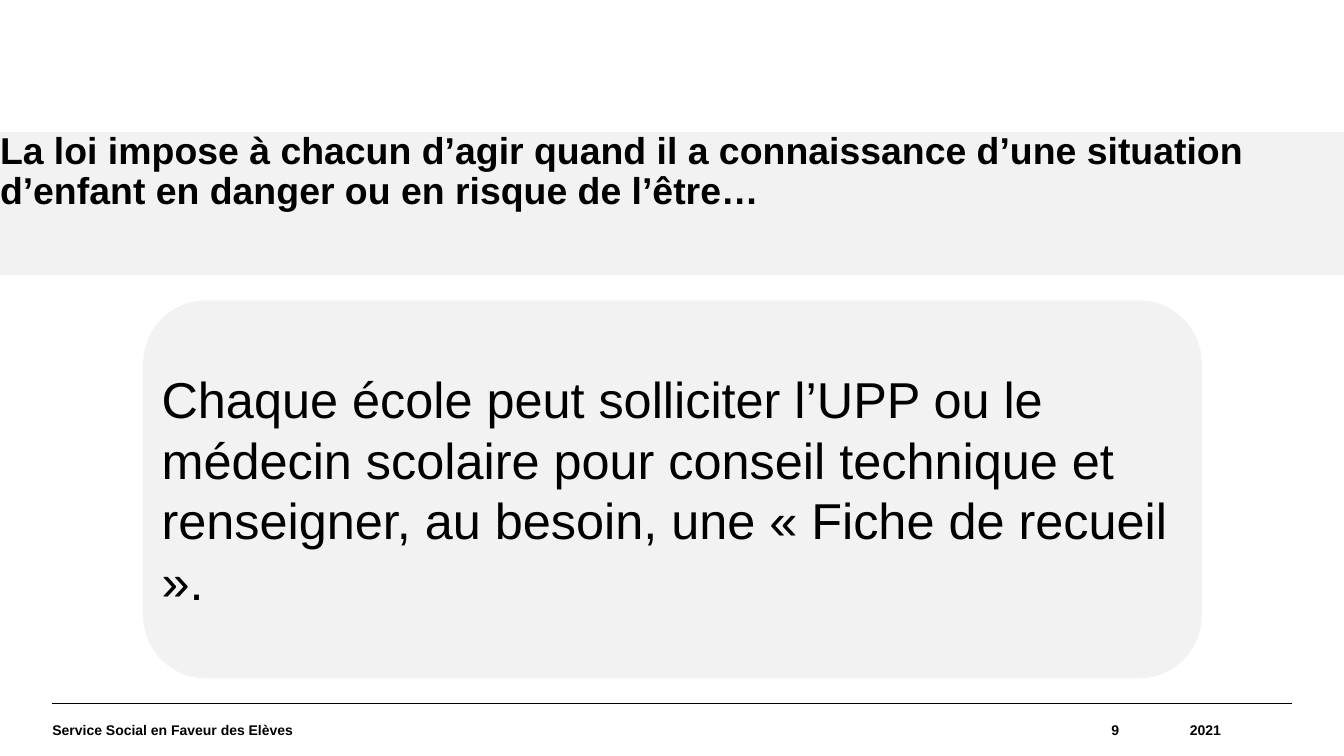
from lxml.etree import SubElement
from pptx import Presentation
from pptx.dml.color import RGBColor
from pptx.enum.shapes import MSO_CONNECTOR
from pptx.enum.text import MSO_ANCHOR, MSO_AUTO_SIZE, PP_ALIGN
from pptx.oxml import parse_xml
from pptx.oxml.ns import nsdecls, qn
from pptx.util import Inches, Pt


def color(value):
    return RGBColor.from_string(value)


def apply(target, values):
    for name, value in values.items():
        setattr(target, name, value)


class SlideBuilder:
    ink = "000000"
    panel = "F2F2F2"
    font_name = "Arial"

    def __init__(self, presentation):
        self.slide = presentation.slides.add_slide(presentation.slide_layouts[1])

    def add_text(self, shape, text, font, paragraph_format, anchor):
        frame = shape.text_frame
        apply(frame, {
            "word_wrap": True, "auto_size": MSO_AUTO_SIZE.NONE,
            "vertical_anchor": anchor,
            "margin_left": 0, "margin_top": 0,
            "margin_right": 0, "margin_bottom": 0,
        })
        paragraph = frame.paragraphs[0]
        run = paragraph.add_run()
        run.text = text
        apply(paragraph, paragraph_format)
        apply(run.font, {"name": self.font_name, **font})
        run.font.color.rgb = color(self.ink)
        return paragraph

    def place(self, shape, left, top, width, height):
        apply(shape, {
            "left": Inches(left), "top": Inches(top),
            "width": Inches(width), "height": Inches(height),
        })
        shape.fill.solid()
        shape.fill.fore_color.rgb = color(self.panel)

    def title(self, text, *box):
        shape = self.slide.shapes.title
        self.place(shape, *box)
        self.add_text(shape, text, {"size": Pt(26.7), "bold": True},
                      {"alignment": PP_ALIGN.LEFT, "line_spacing": 0.9}, MSO_ANCHOR.TOP)

    def rounded_body(self, text, *box):
        shape = self.slide.placeholders[1]
        self.place(shape, *box)
        geometry = parse_xml(
            f'<a:prstGeom {nsdecls("a")} prst="roundRect"><a:avLst/></a:prstGeom>')
        shape._element.spPr.find(qn("a:xfrm")).addnext(geometry)
        paragraph = self.add_text(
            shape, text, {"size": Pt(36)},
            {"alignment": PP_ALIGN.LEFT, "space_before": Pt(0), "space_after": Pt(6.7)},
            MSO_ANCHOR.MIDDLE)
        properties = paragraph._p.get_or_add_pPr()
        properties.set("marL", "0")
        properties.set("indent", "0")
        SubElement(properties, qn("a:buNone"))

    def rule(self, left, right, top):
        connector = self.slide.shapes.add_connector(
            MSO_CONNECTOR.STRAIGHT, Inches(left), Inches(top), Inches(right), Inches(top))
        connector.line.color.rgb = color(self.ink)
        connector.line.width = Pt(0.8)
        SubElement(connector._element.spPr, qn("a:effectLst"))

    def footer(self, left, top, height, cells):
        for text, width, alignment in cells:
            shape = self.slide.shapes.add_textbox(
                Inches(left), Inches(top), Inches(width), Inches(height))
            self.add_text(shape, text, {"size": Pt(10), "bold": True},
                          {"alignment": alignment}, MSO_ANCHOR.MIDDLE)
            left += width


def main():
    presentation = Presentation()
    apply(presentation, {"slide_width": Inches(13.33), "slide_height": Inches(7.5)})
    builder = SlideBuilder(presentation)
    builder.rule(0.52, 12.81, 6.98)
    builder.title(
        "La loi impose à chacun d’agir quand il a connaissance d’une situation "
        "d’enfant en danger ou en risque de l’être…", 0, 1.31, 13.33, 1.42)
    builder.rounded_body(
        "Chaque école peut solliciter l’UPP ou le médecin scolaire pour conseil "
        "technique et renseigner, au besoin, une « Fiche de recueil ».",
        1.42, 2.98, 10.5, 3.75)
    builder.footer(0.52, 6.98, 0.52, [
        ("Service Social en Faveur des Elèves", 8.61, PP_ALIGN.LEFT),
        ("9", 1.97, PP_ALIGN.RIGHT),
        ("2021", 1.71, PP_ALIGN.CENTER),
    ])
    presentation.save("out.pptx")


if __name__ == "__main__":
    main()
